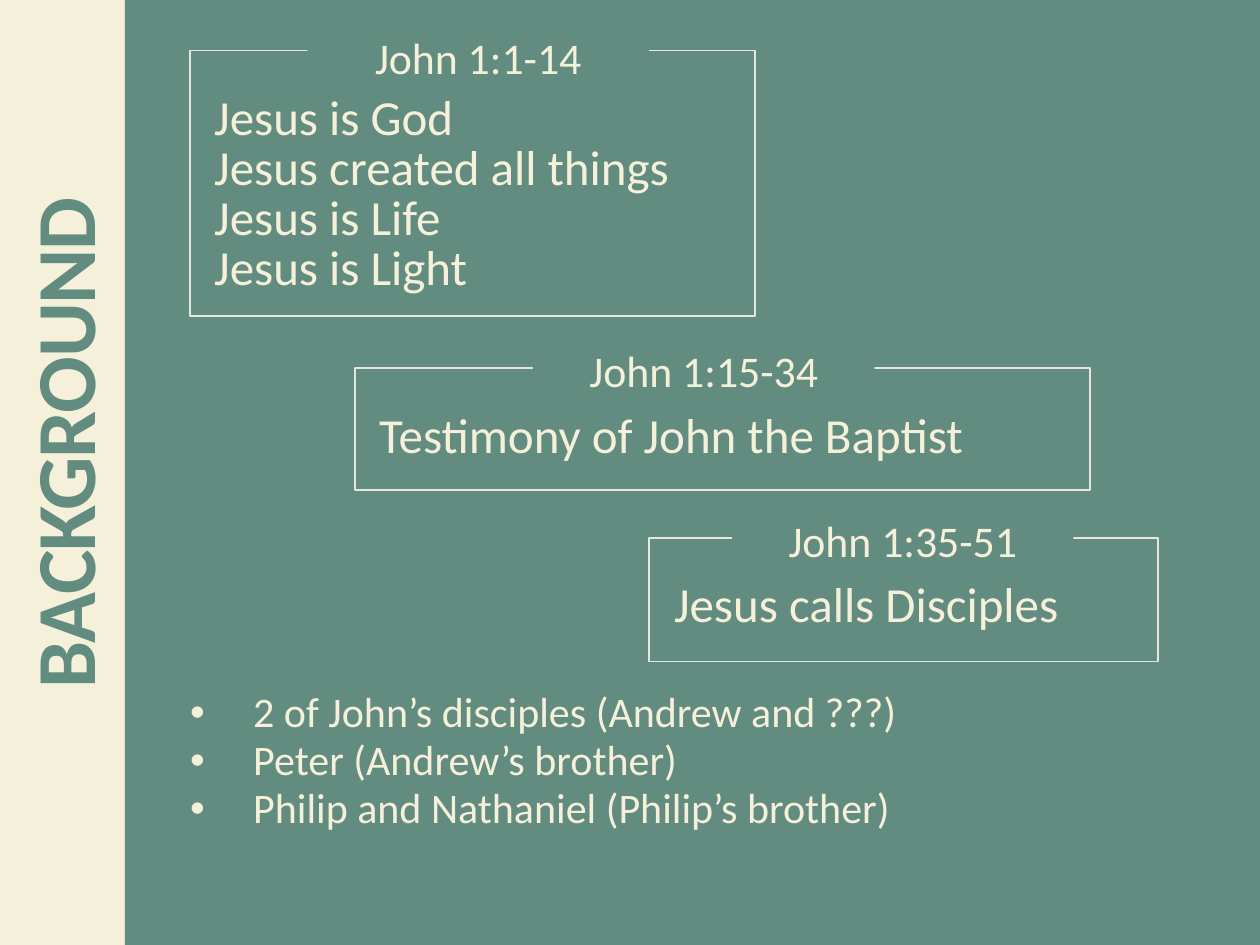
from lxml import etree
from pptx import Presentation
from pptx.dml.color import RGBColor
from pptx.enum.shapes import MSO_SHAPE
from pptx.enum.text import MSO_ANCHOR, MSO_AUTO_SIZE, PP_ALIGN
from pptx.oxml.ns import qn
from pptx.util import Inches, Pt

GREEN = RGBColor(0x63, 0x8C, 0x80)
CREAM = RGBColor(0xF4, 0xF0, 0xD9)
LINE_GREY = RGBColor(0xE7, 0xE6, 0xE6)
FONT = "Calibri"
RECTANGLE = MSO_SHAPE.RECTANGLE
LEFT, CENTER = PP_ALIGN.LEFT, PP_ALIGN.CENTER
TOP = MSO_ANCHOR.TOP
GROW = MSO_AUTO_SIZE.SHAPE_TO_FIT_TEXT
TITLE_ONLY = 5

LABEL_WIDTH, LABEL_HEIGHT = 2.71, 0.31

# frame box, label left and top, text box, label, lines
PASSAGES = [
    ((1.51, 0.4, 4.48, 2.11), (2.44, 0.36), (1.7, 0.76, 4.18, 1.6), "John 1:1-14",
     ["Jesus is God", "Jesus created all things", "Jesus is Life", "Jesus is Light"]),
    ((2.82, 2.92, 5.83, 0.97), (4.23, 2.84), (3.01, 3.28, 5.44, 0.4), "John 1:15-34",
     ["Testimony of John the Baptist"]),
    ((5.15, 4.27, 4.04, 0.98), (5.81, 4.19), (5.35, 4.62, 3.84, 0.4), "John 1:35-51",
     ["Jesus calls Disciples"]),
]
DISCIPLES = [
    "2 of John’s disciples (Andrew and ???)",
    "Peter (Andrew’s brother)",
    "Philip and Nathaniel (Philip’s brother)",
]


def inches(box):
    return [Inches(v) for v in box]


def write(s, lines, size, spacing, align=LEFT, color=CREAM, bold=False):
    """Fill a shape with one paragraph per line and no insets."""
    tf = s.text_frame
    tf.word_wrap = True
    tf.auto_size = GROW
    tf.vertical_anchor = TOP
    tf.margin_left = tf.margin_top = tf.margin_right = tf.margin_bottom = 0
    for i, line in enumerate(lines):
        p = tf.add_paragraph() if i else tf.paragraphs[0]
        p.alignment = align
        p.line_spacing = spacing
        p.space_before = p.space_after = Pt(0)
        r = p.add_run()
        r.text = line
        r.font.name = FONT
        r.font.size = Pt(size)
        r.font.bold = bold
        r.font.color.rgb = color
    return tf


def add_rectangle(slide, box, fill=None, line=None):
    s = slide.shapes.add_shape(RECTANGLE, *inches(box))
    s.shadow.inherit = False
    if fill is None:
        s.fill.background()
    else:
        s.fill.solid()
        s.fill.fore_color.rgb = fill
    if line is None:
        s.line.fill.background()
    else:
        s.line.color.rgb = line
        s.line.width = Pt(1)
    return s


def add_side_title(slide, box, text):
    title = slide.shapes.title
    title.left, title.top, title.width, title.height = inches(box)
    title.rotation = 270
    tf = write(title, [text], 48, 0.9, CENTER, GREEN, bold=True)
    tf.paragraphs[0].runs[0].font._element.set("spc", "-80")


def add_passage(slide, frame, label_at, text_box, label, lines):
    """Framed lines with a label that breaks the frame's top edge."""
    write(slide.shapes.add_textbox(*inches(text_box)), lines, 28, 0.85)
    add_rectangle(slide, frame, line=LINE_GREY)
    s = add_rectangle(slide, (*label_at, LABEL_WIDTH, LABEL_HEIGHT), fill=GREEN)
    write(s, [label], 25, 0.7, CENTER)


def add_bullets(slide, box, lines):
    tf = write(slide.shapes.add_textbox(*inches(box)), lines, 24, 0.95)
    for p in tf.paragraphs:
        pPr = p._p.get_or_add_pPr()
        pPr.set("marL", str(Inches(0.5)))
        pPr.set("indent", str(-Inches(0.5)))
        etree.SubElement(pPr, qn("a:buFont")).set("typeface", "Arial")
        etree.SubElement(pPr, qn("a:buChar")).set("char", "•")


def main():
    prs = Presentation()
    prs.slide_width, prs.slide_height = Inches(10), Inches(7.5)
    slide = prs.slides.add_slide(prs.slide_layouts[TITLE_ONLY])
    slide.background.fill.solid()
    slide.background.fill.fore_color.rgb = CREAM

    add_rectangle(slide, (0.99, 0, 9.01, 7.5), fill=GREEN)
    add_side_title(slide, (-2.97, 3.15, 7.03, 0.73), "BACKGROUND")
    for passage in PASSAGES:
        add_passage(slide, *passage)
    add_bullets(slide, (1.51, 5.47, 8.68, 1.15), DISCIPLES)
    prs.save("out.pptx")


if __name__ == "__main__":
    main()
